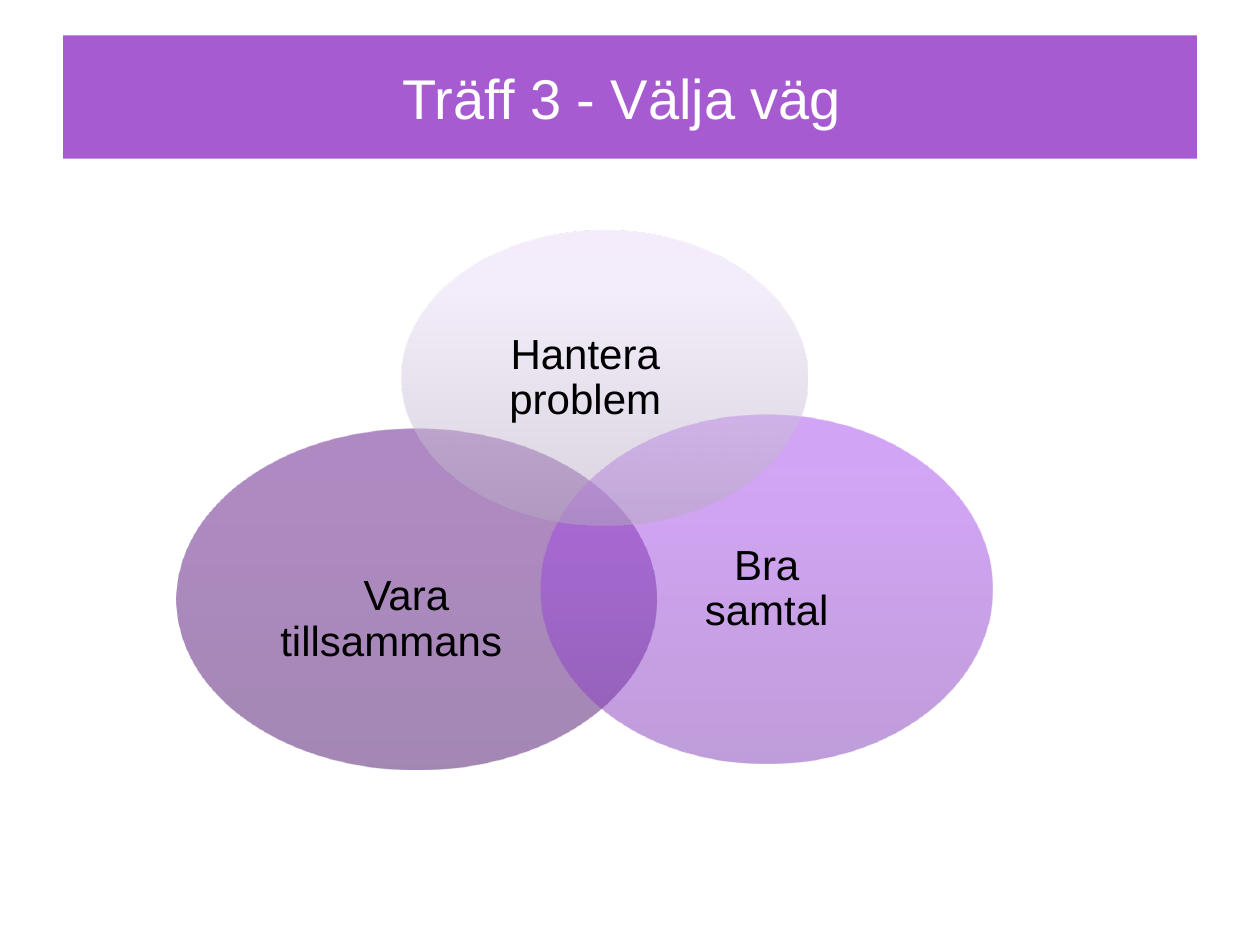
from dataclasses import dataclass
from math import sqrt

from lxml.etree import SubElement
from pptx import Presentation
from pptx.dml.color import RGBColor
from pptx.enum.shapes import MSO_SHAPE
from pptx.enum.text import MSO_ANCHOR, MSO_AUTO_SIZE, PP_ALIGN
from pptx.oxml.ns import qn
from pptx.util import Inches, Pt

CELL = 0.1
INSCRIBED = sqrt(0.5)
SIDES = ("left", "top", "width", "height")
MARGINS = ("margin_left", "margin_top", "margin_right", "margin_bottom")

BLACK = RGBColor(0x00, 0x00, 0x00)
WHITE = RGBColor(0xFF, 0xFF, 0xFF)
PURPLE = RGBColor(0xA7, 0x5B, 0xD1)
PLUM = (RGBColor(0x48, 0x10, 0x67), RGBColor(0x5E, 0x15, 0x86), RGBColor(0x5F, 0x13, 0x89))
VIOLET = (RGBColor(0x81, 0x3A, 0xB6), RGBColor(0xA7, 0x4B, 0xEC), RGBColor(0xA8, 0x49, 0xF0))
LILAC = (RGBColor(0xB4, 0xA9, 0xBF), RGBColor(0xEA, 0xDC, 0xF7), RGBColor(0xEB, 0xDC, 0xF9))
STOPS = (0, 80, 100)
OPACITY = 50

TITLE_FONT = {"name": "Arial", "size": Pt(32)}
LABEL_FONT = {"name": "Arial", "size": Pt(24)}
FRAME = {
    "word_wrap": True,
    "auto_size": MSO_AUTO_SIZE.NONE,
    "vertical_anchor": MSO_ANCHOR.MIDDLE,
}


@dataclass(frozen=True)
class Circle:
    label: str
    box: tuple[float, float, float, float]
    colors: tuple[RGBColor, RGBColor, RGBColor]
    insets: tuple[float, float, float, float]


CIRCLES = (
    Circle("Vara tillsammans\t", (14, 34, 38.1, 27.1), PLUM, (0.8, 3.5, 2.4, 0.2)),
    Circle("Bra samtal", (42.9, 32.9, 35.9, 27.7), VIOLET, (5.1, 0.3, 5.1, 0.3)),
    Circle("Hantera problem", (31.9, 18.3, 32.2, 23.4), LILAC, (2, 0.3, 5.1, 0.3)),
)


def grid(*cells: float) -> list[int]:
    return [Inches(c * CELL) for c in cells]


def apply(obj, values: dict) -> None:
    for name, value in values.items():
        setattr(obj, name, value)


def write(sp, text: str, font: dict, color: RGBColor, insets, spacing: float) -> None:
    tf = sp.text_frame
    apply(tf, FRAME | dict(zip(MARGINS, grid(*insets))))
    p = tf.paragraphs[0]
    apply(p, {"alignment": PP_ALIGN.CENTER, "line_spacing": spacing})
    r = p.add_run()
    r.text = text
    apply(r.font, font)
    r.font.color.rgb = color


def fill_gradient(sp, colors: tuple[RGBColor, ...]) -> None:
    sp.fill.gradient()
    grad = sp.fill._fill._gradFill
    for child in list(grad):
        grad.remove(child)
    stops = SubElement(grad, qn("a:gsLst"))
    for pos, color in zip(STOPS, colors):
        gs = SubElement(stops, qn("a:gs"), pos=str(pos * 1000))
        clr = SubElement(gs, qn("a:srgbClr"), val=str(color))
        SubElement(clr, qn("a:alpha"), val=str(OPACITY * 1000))
    SubElement(grad, qn("a:lin"), ang=str(270 * 60000), scaled="0")


def draw_circle(shapes, circle: Circle) -> None:
    x, y, w, h = circle.box
    sp = shapes.add_shape(MSO_SHAPE.OVAL, *grid(x, y, w, h))
    sp.shadow.inherit = False
    sp.line.fill.background()
    fill_gradient(sp, circle.colors)
    edge = (1 - INSCRIBED) / 2
    tb = shapes.add_textbox(*grid(x + w * edge, y + h * edge, w * INSCRIBED, h * INSCRIBED))
    write(tb, circle.label, LABEL_FONT, BLACK, circle.insets, 0.9)


def draw_title(s, text: str) -> None:
    sp = s.shapes.title
    apply(sp, dict(zip(SIDES, grid(5, 2.8, 90, 9.8))))
    sp.fill.solid()
    sp.fill.fore_color.rgb = PURPLE
    write(sp, text, TITLE_FONT, WHITE, (0, 0, 0, 0), 1.0)


def main() -> None:
    prs = Presentation()
    prs.slide_width, prs.slide_height = grid(100, 75)
    s = prs.slides.add_slide(prs.slide_layouts[5])
    draw_title(s, "Träff 3 - Välja väg ")
    for circle in CIRCLES:
        draw_circle(s.shapes, circle)
    prs.save("out.pptx")


if __name__ == "__main__":
    main()
